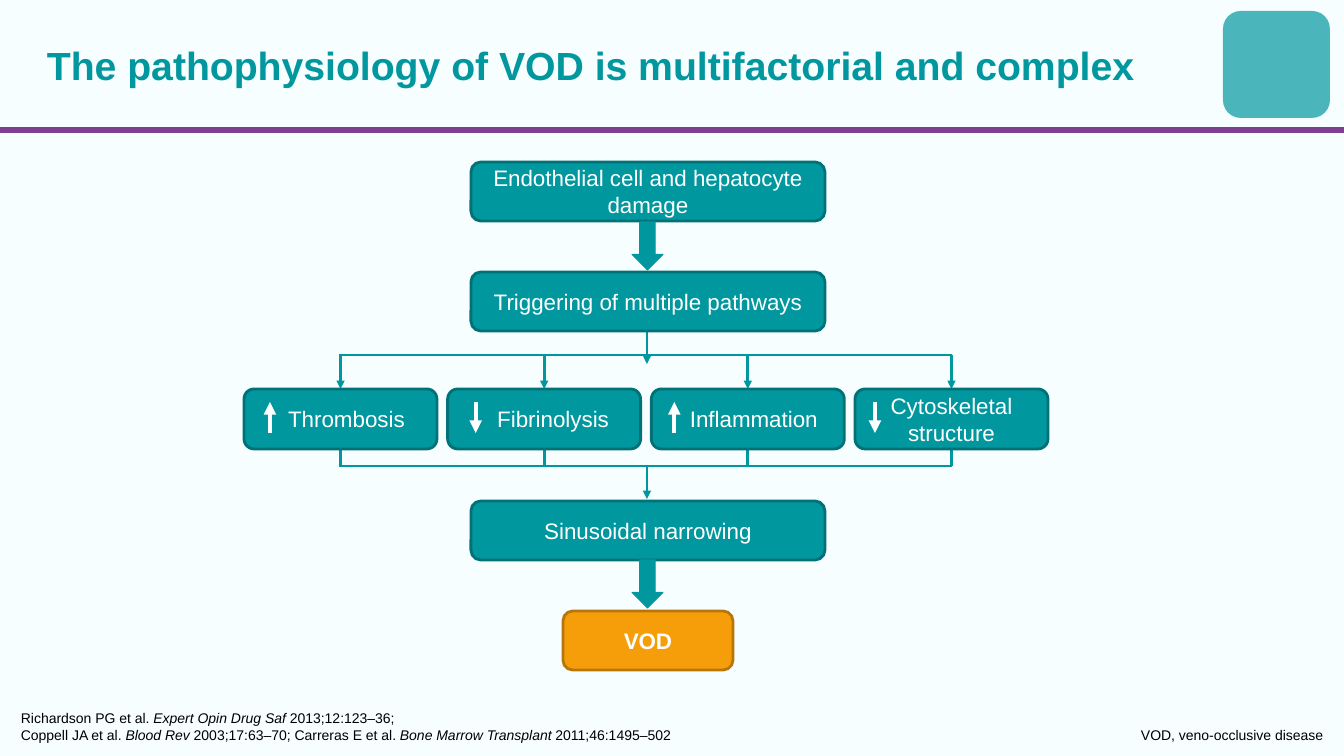
from lxml.etree import SubElement
from pptx import Presentation
from pptx.dml.color import RGBColor
from pptx.enum.shapes import MSO_CONNECTOR, MSO_SHAPE
from pptx.enum.text import MSO_ANCHOR, PP_ALIGN
from pptx.oxml.ns import qn
from pptx.util import Emu, Pt

PX = 914400 / 100.8
FONT = "Arial"
BACKGROUND = RGBColor(0xF7, 0xFE, 0xFF)
TEAL = RGBColor(0x00, 0x97, 0x9E)
DARK_TEAL = RGBColor(0x00, 0x71, 0x76)
LIGHT_TEAL = RGBColor(0x4A, 0xB5, 0xBB)
ORANGE = RGBColor(0xF5, 0x9E, 0x09)
DARK_ORANGE = RGBColor(0xB8, 0x76, 0x07)
PURPLE = RGBColor(0x7F, 0x3F, 0x90)
WHITE = RGBColor(0xFF, 0xFF, 0xFF)
BLACK = RGBColor(0x00, 0x00, 0x00)

# Label, text shift, arrow offset from the box's left edge, arrow points up
PATHWAYS = [
    ("Thrombosis", 12, 26, True),
    ("Fibrinolysis", 18, 28, False),
    ("Inflammation", 12, 23, True),
    ("Cytoskeletal structure", 0, 20, False),
]
# Each line is a list of (text, italic) runs
REFERENCES = [
    [("Richardson PG et al. ", False), ("Expert Opin Drug Saf ", True),
     ("2013;12:123–36;", False)],
    [("Coppell JA et al. ", False), ("Blood Rev ", True),
     ("2003;17:63–70; Carreras E et al. ", False),
     ("Bone Marrow Transplant ", True), ("2011;46:1495–502", False)],
]


def px(length):
    return Emu(round(length * PX))


def add_run(paragraph, text, size, color, bold=False, italic=False):
    run = paragraph.add_run()
    run.text = text
    font = run.font
    font.name, font.size = FONT, Pt(size)
    font.bold, font.italic = bold, italic
    font.color.rgb = color


def add_text(slide, box, lines, size, color, anchor, align=PP_ALIGN.LEFT, bold=False):
    frame = slide.shapes.add_textbox(*map(px, box)).text_frame
    frame.word_wrap = True
    frame.vertical_anchor = anchor
    paragraph = frame.paragraphs[0]
    paragraph.alignment = align
    for number, line in enumerate(lines):
        if number:
            paragraph.add_line_break()
        for text, italic in line:
            add_run(paragraph, text, size, color, bold, italic)


def add_block(slide, kind, box, fill, outline=None, width=2):
    block = slide.shapes.add_shape(kind, *map(px, box))
    block.shadow.inherit = False
    block.fill.solid()
    block.fill.fore_color.rgb = fill
    if outline is None:
        block.line.fill.background()
    else:
        block.line.color.rgb = outline
        block.line.width = Pt(width)
    return block


def add_line(slide, start, end, color, width, arrow=False):
    line = slide.shapes.add_connector(
        MSO_CONNECTOR.STRAIGHT, *map(px, (*start, *end)))
    line.line.color.rgb = color
    line.line.width = Pt(width)
    if arrow:
        SubElement(line.line._get_or_add_ln(), qn("a:tailEnd"), type="triangle")
    SubElement(line._element.spPr, qn("a:effectLst"))


def add_step(slide, box, label, fill=TEAL, outline=DARK_TEAL, bold=False, shift=0):
    frame = add_block(slide, MSO_SHAPE.ROUNDED_RECTANGLE, box, fill, outline).text_frame
    frame.word_wrap = True
    frame.vertical_anchor = MSO_ANCHOR.MIDDLE
    frame.margin_left = px(10 + shift)
    frame.margin_right = px(10)
    paragraph = frame.paragraphs[0]
    paragraph.alignment = PP_ALIGN.CENTER
    add_run(paragraph, label, 16, WHITE, bold)


def add_header(slide, box):
    left, top, width, height = box
    add_block(slide, MSO_SHAPE.ROUNDED_RECTANGLE,
              (left + width - 121, top + 11, 107, 107), LIGHT_TEAL)
    rule_y = top + height
    add_line(slide, (left, rule_y), (left + width, rule_y), PURPLE, 4.5)
    title = "The pathophysiology of VOD is multifactorial and complex"
    add_text(slide, (left + 37, top + 9, 1186, 111), [[(title, False)]],
             28, TEAL, MSO_ANCHOR.MIDDLE, bold=True)


def add_pathways(slide, box):
    left, top, width, height = box
    box_width, box_height = 193, 60
    box_top = top + 34
    pitch = (width - box_width) / (len(PATHWAYS) - 1)
    centers = [left + box_width / 2 + i * pitch for i in range(len(PATHWAYS))]

    # Bars that split and rejoin the flow
    for bar_y in (top, top + height):
        add_line(slide, (centers[0] - 1, bar_y), (centers[-1] + 1, bar_y), TEAL, 2)

    for center, (label, shift, offset, rises) in zip(centers, PATHWAYS):
        box_left = center - box_width / 2
        add_line(slide, (center, top), (center, box_top), TEAL, 2, arrow=True)
        add_line(slide, (center, box_top + box_height), (center, top + height), TEAL, 2)
        add_step(slide, (box_left, box_top, box_width, box_height), label, shift=shift)
        ends = [(box_left + offset, box_top + y) for y in (13, 44)]
        if rises:
            ends.reverse()
        add_line(slide, *ends, WHITE, 3, arrow=True)


def add_flow(slide, box):
    left, top, width, height = box
    center = left + width / 2 + 2
    step_width, step_height = 354, 59

    # Thin arrows into and out of the pathways
    for y in (top + 170, top + 305):
        add_line(slide, (center - 1, y), (center - 1, y + 32), TEAL, 2, arrow=True)
    add_pathways(slide, (left, top + 193, width, 111))

    # Main steps
    for offset, label in ((0, "Endothelial cell and hepatocyte damage"),
                          (110, "Triggering of multiple pathways"),
                          (339, "Sinusoidal narrowing")):
        add_step(slide, (center - step_width / 2, top + offset, step_width, step_height),
                 label)

    # Block arrows
    for offset in (60, 398):
        add_block(slide, MSO_SHAPE.DOWN_ARROW,
                  (center - 16, top + offset, 31, 48), TEAL, TEAL, 0.75)

    # Outcome
    add_step(slide, (center - 85, top + height - step_height, 170, step_height),
             "VOD", ORANGE, DARK_ORANGE, bold=True)


def add_footer(slide, box):
    left, top, width, height = box
    add_text(slide, (left, top, 804, height), REFERENCES, 10, BLACK, MSO_ANCHOR.BOTTOM)
    add_text(slide, (left + width - 400, top + 12, 400, height - 12),
             [[("VOD, veno-occlusive disease", False)]],
             10, BLACK, MSO_ANCHOR.BOTTOM, PP_ALIGN.RIGHT)


def main():
    deck = Presentation()
    deck.slide_width, deck.slide_height = px(1344), px(756)
    slide = deck.slides.add_slide(deck.slide_layouts[6])
    slide.background.fill.solid()
    slide.background.fill.fore_color.rgb = BACKGROUND
    add_header(slide, (0, 0, 1344, 130))
    add_flow(slide, (244, 162, 804, 508))
    add_footer(slide, (11, 704, 1322, 44))
    deck.save("out.pptx")


if __name__ == "__main__":
    main()
